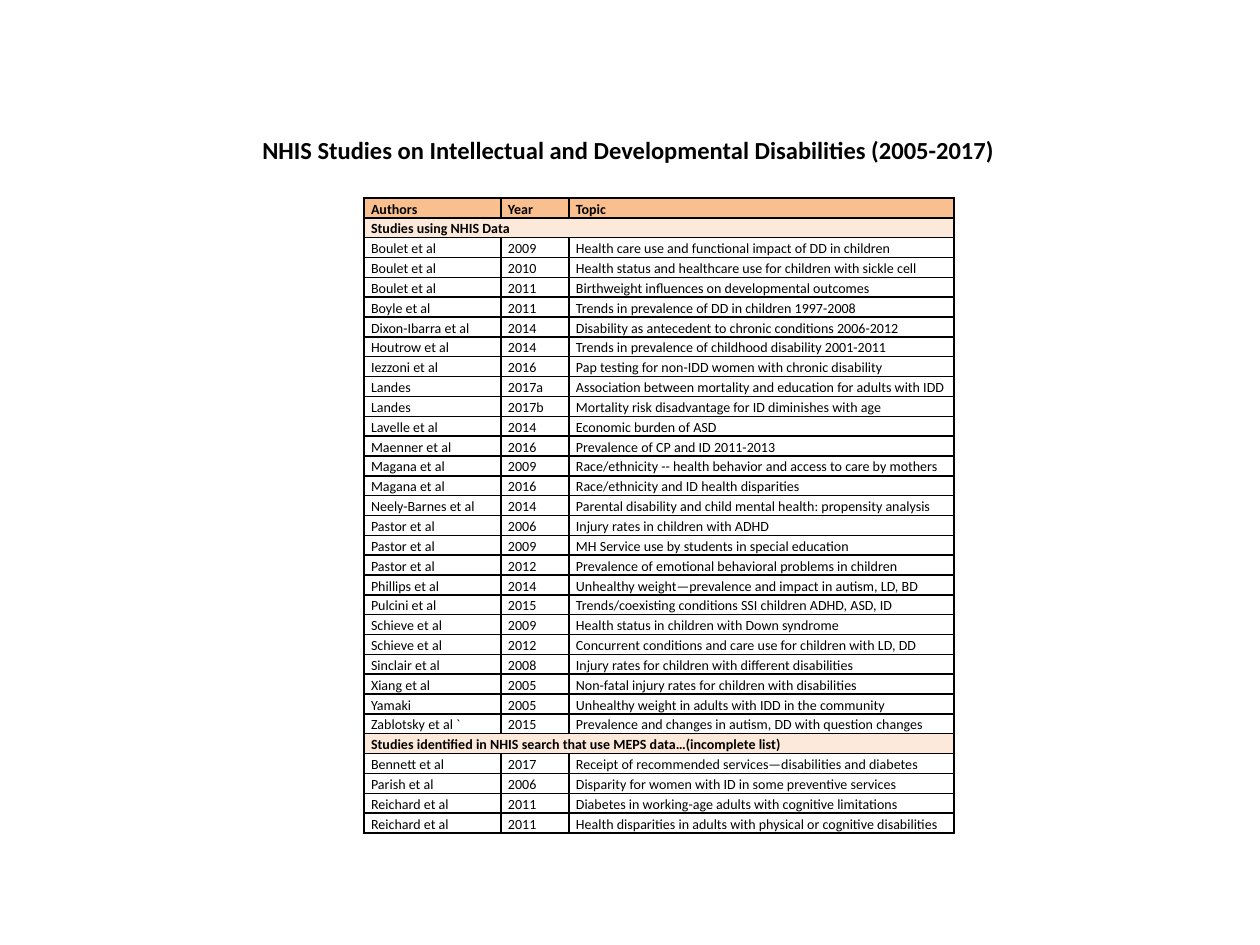
from lxml.etree import SubElement
from pptx import Presentation
from pptx.dml.color import RGBColor
from pptx.enum.text import MSO_ANCHOR, MSO_AUTO_SIZE, PP_ALIGN
from pptx.oxml.ns import qn
from pptx.util import Emu, Pt

PX = 914400 / 126
FONT = "Calibri"
COLORS = {"ink": "000000", "header": "FABF8F", "section": "FDE9D9"}
COLUMN_WIDTHS = [137, 68, 385]

HEADINGS = ("Authors", "Year", "Topic")
NHIS_SECTION = "Studies using NHIS Data"
NHIS_STUDIES = [
    ("Boulet et al", "2009", "Health care use and functional impact of DD in children"),
    ("Boulet et al", "2010", "Health status and healthcare use for children with sickle cell"),
    ("Boulet et al", "2011", "Birthweight influences on developmental outcomes"),
    ("Boyle et al", "2011", "Trends in prevalence of DD in children 1997-2008"),
    ("Dixon-Ibarra et al", "2014", "Disability as antecedent to chronic conditions 2006-2012"),
    ("Houtrow et al", "2014", "Trends in prevalence of childhood disability 2001-2011"),
    ("Iezzoni et al", "2016", "Pap testing for non-IDD women with chronic disability"),
    ("Landes", "2017a", "Association between mortality and education for adults with IDD"),
    ("Landes", "2017b", "Mortality risk disadvantage for ID diminishes with age"),
    ("Lavelle et al", "2014", "Economic burden of ASD"),
    ("Maenner et al", "2016", "Prevalence of CP and ID 2011-2013"),
    ("Magana et al", "2009", "Race/ethnicity -- health behavior and access to care by mothers"),
    ("Magana et al", "2016", "Race/ethnicity and ID health disparities"),
    ("Neely-Barnes et al", "2014", "Parental disability and child mental health: propensity analysis"),
    ("Pastor et al", "2006", "Injury rates in children with ADHD"),
    ("Pastor et al", "2009", "MH Service use by students in special education"),
    ("Pastor et al", "2012", "Prevalence of emotional behavioral problems in children"),
    ("Phillips et al", "2014", "Unhealthy weight—prevalence and impact in autism, LD, BD"),
    ("Pulcini et al", "2015", "Trends/coexisting conditions SSI children ADHD, ASD, ID"),
    ("Schieve et al", "2009", "Health status in children with Down syndrome"),
    ("Schieve et al", "2012", "Concurrent conditions and care use for children with LD, DD"),
    ("Sinclair et al", "2008", "Injury rates for children with different disabilities"),
    ("Xiang et al", "2005", "Non-fatal injury rates for children with disabilities"),
    ("Yamaki", "2005", "Unhealthy weight in adults with IDD in the community"),
    ("Zablotsky et al `", "2015", "Prevalence and changes in autism, DD with question changes"),
]
MEPS_SECTION = "Studies identified in NHIS search that use MEPS data…(incomplete list)"
MEPS_STUDIES = [
    ("Bennett et al", "2017", "Receipt of recommended services—disabilities and diabetes"),
    ("Parish et al", "2006", "Disparity for women with ID in some preventive services"),
    ("Reichard et al", "2011", "Diabetes in working-age adults with cognitive limitations"),
    ("Reichard et al", "2011", "Health disparities in adults with physical or cognitive disabilities"),
]


def px(length):
    return Emu(round(length * PX))


def color(name):
    return RGBColor.from_string(COLORS[name])


def format_runs(paragraph, size, bold):
    for run in paragraph.runs:
        run.font.name = FONT
        run.font.size = Pt(size)
        run.font.bold = bold
        run.font.color.rgb = color("ink")


def add_title(slide, text):
    title = slide.shapes.title
    title.left, title.top, title.width, title.height = px(-67), px(128), px(1391), px(43)
    frame = title.text_frame
    frame.text = text
    frame.word_wrap = True
    frame.vertical_anchor = MSO_ANCHOR.MIDDLE
    frame.auto_size = MSO_AUTO_SIZE.SHAPE_TO_FIT_TEXT
    frame.paragraphs[0].alignment = PP_ALIGN.CENTER
    format_runs(frame.paragraphs[0], 14, True)


def add_borders(cell):
    properties = cell._tc.get_or_add_tcPr()
    for side in ("a:lnL", "a:lnR", "a:lnT", "a:lnB"):
        line = SubElement(properties, qn(side), w=str(Pt(1)))
        fill = SubElement(line, qn("a:solidFill"))
        SubElement(fill, qn("a:srgbClr"), val=COLORS["ink"])


def style_cell(cell, fill):
    cell.margin_left = cell.margin_right = px(7)
    cell.margin_top = cell.margin_bottom = 0
    add_borders(cell)
    if fill:
        cell.fill.solid()
        cell.fill.fore_color.rgb = color(fill)
    else:
        cell.fill.background()


def fill_row(table, row, texts, fill=None):
    # A row with a single text is a section band across all columns
    if len(texts) == 1:
        table.cell(row, 0).merge(table.cell(row, len(COLUMN_WIDTHS) - 1))
    for column in range(len(COLUMN_WIDTHS)):
        style_cell(table.cell(row, column), fill)
    for column, text in enumerate(texts):
        paragraph = table.cell(row, column).text_frame.paragraphs[0]
        paragraph.text = text
        paragraph.line_spacing = 1.15
        format_runs(paragraph, 8, fill is not None)


def add_studies_table(slide):
    rows = [(HEADINGS, "header"), ((NHIS_SECTION,), "section")]
    rows += [(study, None) for study in NHIS_STUDIES]
    rows += [((MEPS_SECTION,), "section")]
    rows += [(study, None) for study in MEPS_STUDIES]

    table = slide.shapes.add_table(
        len(rows), len(COLUMN_WIDTHS), px(364), px(198), px(sum(COLUMN_WIDTHS)), px(635)
    ).table
    table.first_row = table.horz_banding = False
    for column, width in zip(table.columns, COLUMN_WIDTHS):
        column.width = px(width)
    for row, (texts, fill) in enumerate(rows):
        fill_row(table, row, texts, fill)


def main():
    presentation = Presentation()
    presentation.slide_width, presentation.slide_height = px(1260), px(945)
    slide = presentation.slides.add_slide(presentation.slide_layouts[5])
    add_title(slide, "NHIS Studies on Intellectual and Developmental Disabilities (2005-2017)")
    add_studies_table(slide)
    presentation.save("out.pptx")


if __name__ == "__main__":
    main()
